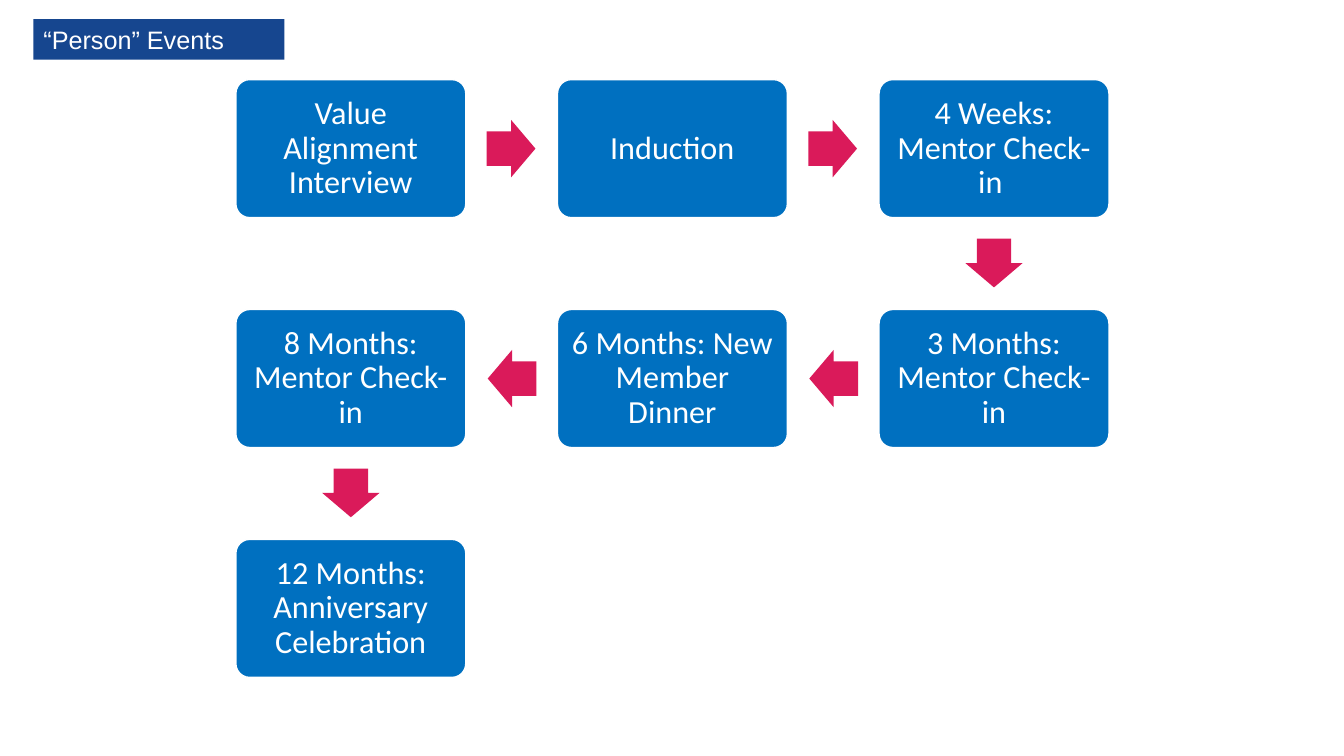
from pptx import Presentation
from pptx.dml.color import RGBColor
from pptx.enum.shapes import MSO_SHAPE
from pptx.enum.text import MSO_ANCHOR, MSO_AUTO_SIZE, PP_ALIGN
from pptx.util import Pt

ROUNDED = MSO_SHAPE.ROUNDED_RECTANGLE
RIGHT_ARROW = MSO_SHAPE.RIGHT_ARROW
MIDDLE = MSO_ANCHOR.MIDDLE
NO_AUTOFIT = MSO_AUTO_SIZE.NONE
LEFT, CENTER = PP_ALIGN.LEFT, PP_ALIGN.CENTER
TITLE_ONLY = 5

COLORS = {"step": "0070C0", "arrow": "DA1A5A", "heading": "16468F", "white": "FFFFFF"}

COLUMNS = 3
STEP_W, STEP_H = 164.2, 98.6
FIRST_LEFT, FIRST_TOP = 168.5, 56.9
PITCH_X, PITCH_Y = 229.7, 164.2
ARROW_LENGTH, ARROW_WIDTH, ARROW_GAP = 34.8, 41, 15

STEPS = [
    "Value Alignment Interview",
    "Induction",
    "4 Weeks: Mentor Check-in ",
    "3 Months: Mentor Check-in",
    "6 Months: New Member Dinner",
    "8 Months: Mentor Check-in",
    "12 Months: Anniversary Celebration",
]


def color(name):
    return RGBColor.from_string(COLORS[name])


def paint(shape, name):
    shape.fill.solid()
    shape.fill.fore_color.rgb = color(name)


def write(shape, text, font, size, align):
    frame = shape.text_frame
    frame.word_wrap = True
    frame.auto_size = NO_AUTOFIT
    frame.vertical_anchor = MIDDLE
    paragraph = frame.paragraphs[0]
    paragraph.alignment = align
    run = paragraph.add_run()
    run.text = text
    run.font.name = font
    run.font.size = Pt(size)
    run.font.color.rgb = color("white")
    return paragraph


def add_heading(slide, text):
    heading = slide.shapes.title
    heading.left, heading.top = Pt(23.8), Pt(13.7)
    heading.width, heading.height = Pt(179.3), Pt(29)
    paint(heading, "heading")
    write(heading, text, "Arial", 18, LEFT)


def step_center(index):
    row, column = divmod(index, COLUMNS)
    if row % 2:
        column = COLUMNS - 1 - column
    return (FIRST_LEFT + column * PITCH_X + STEP_W / 2,
            FIRST_TOP + row * PITCH_Y + STEP_H / 2)


def add_centered(slide, kind, center, width, height):
    x, y = center
    shape = slide.shapes.add_shape(
        kind, Pt(x - width / 2), Pt(y - height / 2), Pt(width), Pt(height))
    shape.shadow.inherit = False
    return shape


def add_step(slide, index, text):
    step = add_centered(slide, ROUNDED, step_center(index), STEP_W, STEP_H)
    step.adjustments[0] = 0.1
    paint(step, "step")
    step.line.color.rgb = color("white")
    step.line.width = Pt(1)
    frame = step.text_frame
    frame.margin_left = frame.margin_right = Pt(7.2)
    frame.margin_top = frame.margin_bottom = Pt(7.2)
    write(step, text, "Calibri", 23, CENTER).line_spacing = 0.9


def add_arrow(slide, index):
    x, y = step_center(index)
    next_x, next_y = step_center(index + 1)
    reach = ARROW_GAP + ARROW_LENGTH / 2
    if next_y > y:
        center, rotation = (x, y + STEP_H / 2 + reach), 90
    elif next_x > x:
        center, rotation = (x + STEP_W / 2 + reach, y), 0
    else:
        center, rotation = (x - STEP_W / 2 - reach, y), 180
    arrow = add_centered(slide, RIGHT_ARROW, center, ARROW_LENGTH, ARROW_WIDTH)
    arrow.adjustments[0] = 0.6
    arrow.adjustments[1] = 0.5
    arrow.rotation = rotation
    paint(arrow, "arrow")
    arrow.line.fill.background()


def main():
    presentation = Presentation()
    presentation.slide_width, presentation.slide_height = Pt(960), Pt(540)
    slide = presentation.slides.add_slide(presentation.slide_layouts[TITLE_ONLY])
    add_heading(slide, "“Person” Events")
    for index, text in enumerate(STEPS):
        add_step(slide, index, text)
        if index < len(STEPS) - 1:
            add_arrow(slide, index)
    presentation.save("out.pptx")


if __name__ == "__main__":
    main()
